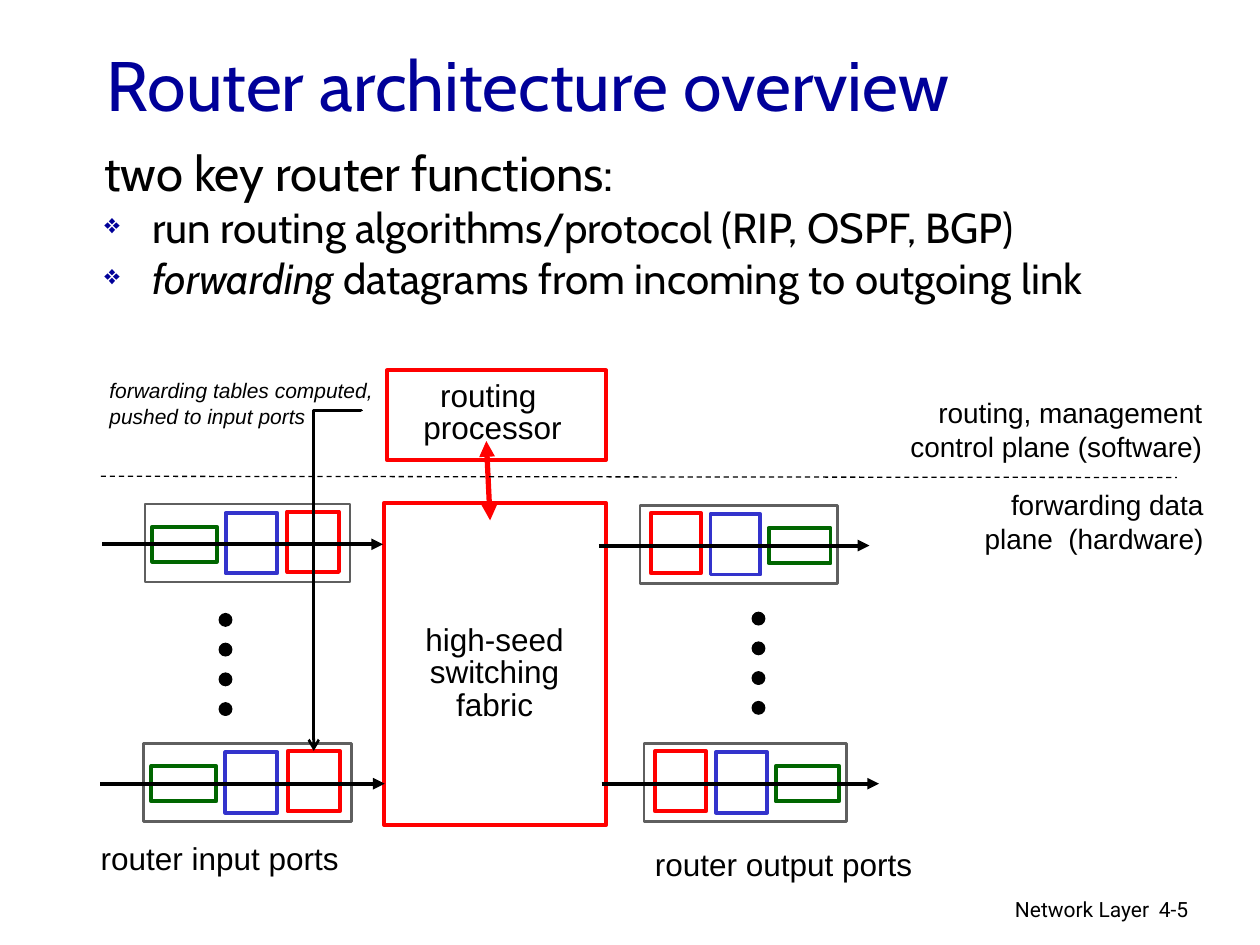
from lxml import etree
from pptx import Presentation
from pptx import util as u
from pptx.dml.color import RGBColor
from pptx.enum import dml, shapes, text
from pptx.oxml.ns import qn

PX = 9144  # 100 px to the inch
COLORS = {
    "white": "FFFFFF", "black": "000000", "navy": "000099", "red": "FF0000",
    "blue": "3333CC", "green": "006600", "gray": "5F5F5F",
}
LEFT, CENTER, RIGHT = text.PP_ALIGN.LEFT, text.PP_ALIGN.CENTER, text.PP_ALIGN.RIGHT


def px(*lengths):
    return [u.Emu(round(length * PX)) for length in lengths]


def rgb(name):
    return RGBColor.from_string(COLORS[name])


def add_span(para, words, size, font, color="black", italic=False):
    span = para.add_run()
    span.text = words
    span.font.size = u.Pt(size)
    span.font.name = font
    span.font.italic = italic
    span.font.color.rgb = rgb(color)


def add_frame(slide, box, wrap=True, anchor=text.MSO_ANCHOR.TOP):
    frame = slide.shapes.add_textbox(*px(*box)).text_frame
    frame.word_wrap = wrap
    frame.vertical_anchor = anchor
    return frame


def add_label(slide, box, lines, size, font="Arial", align=LEFT, wrap=False,
              spacing=None, italic=False):
    frame = add_frame(slide, box, wrap)
    if not wrap:
        frame.auto_size = text.MSO_AUTO_SIZE.SHAPE_TO_FIT_TEXT
    for index, line in enumerate(lines):
        para = frame.add_paragraph() if index else frame.paragraphs[0]
        para.alignment = align
        para.line_spacing = spacing
        add_span(para, line, size, font, italic=italic)


def add_block(slide, box, line, width, fill="white", kind=shapes.MSO_SHAPE.RECTANGLE):
    block = slide.shapes.add_shape(kind, *px(*box))
    block.shadow.inherit = False
    block.fill.solid()
    block.fill.fore_color.rgb = rgb(fill)
    block.line.color.rgb = rgb(line)
    block.line.width = u.Pt(width)


def add_line(slide, ends, color, width, head=None, tail=None,
             kind=shapes.MSO_CONNECTOR.STRAIGHT):
    line = slide.shapes.add_connector(kind, *px(*ends))
    line.line.color.rgb = rgb(color)
    line.line.width = u.Pt(width)
    outline = line.line._get_or_add_ln()
    for tag, arrow in (("a:headEnd", head), ("a:tailEnd", tail)):
        if arrow:
            etree.SubElement(outline, qn(tag), type=arrow)
    etree.SubElement(line._element.spPr, qn("a:effectLst"))
    return line


def add_bullet(para, indent):
    props = para._p.get_or_add_pPr()
    props.set("marL", str(indent))
    props.set("indent", str(-indent))
    color = etree.SubElement(props, qn("a:buClr"))
    etree.SubElement(color, qn("a:srgbClr"), val=COLORS["navy"])
    etree.SubElement(props, qn("a:buSzPct"), val="65000")
    etree.SubElement(props, qn("a:buChar"), char="❖")


def add_title(slide, box):
    frame = add_frame(slide, box, anchor=text.MSO_ANCHOR.MIDDLE)
    add_span(frame.paragraphs[0], "Router architecture overview", 40, "Cabin", "navy")


def add_functions(slide, box):
    frame = add_frame(slide, box)
    rows = [
        (28, False, [("two key router functions:", False)]),
        (24, True, [("run routing algorithms/protocol (RIP, OSPF, BGP)", False)]),
        (24, True, [("forwarding ", True),
                    ("datagrams from incoming to outgoing link", False)]),
    ]
    for index, (size, bulleted, spans) in enumerate(rows):
        para = frame.add_paragraph() if index else frame.paragraphs[0]
        para.line_spacing = 0.85
        para.space_before = u.Pt(size * 0.2)
        if bulleted:
            add_bullet(para, 38 * PX)
        for words, italic in spans:
            add_span(para, words, size, "Cabin", italic=italic)


def add_core(slide, box):
    """Switching fabric below, routing processor above, joined by an arrow."""
    left, top, width, height = box
    add_block(slide, (left, top + 105, width, height - 105), "red", 2.25)
    add_label(slide, (left + 20, top + 198, 135, 88),
              ["high-seed ", "switching", "fabric"], 18, align=CENTER, spacing=0.85)
    add_block(slide, (left + 2, top, width - 2, 71), "red", 2.25)
    add_label(slide, (left + 21, top + 4, 130, 61),
              ["routing ", "processor"], 18, align=CENTER, spacing=0.85)
    add_line(slide, (left + 81, top + 56, left + 84, top + 119), "red", 3,
             "triangle", "triangle")


def add_port(slide, box, mirrored=False):
    """Three stages in a frame, crossed by the flow; output ports are mirrored."""
    left, top, width, height = box
    scale = width / 163
    add_block(slide, box, "gray", 1.5)
    stages = [("green", 6, 18, 51, 28), ("blue", 64, 7, 41, 48), ("red", 113, 6, 41, 48)]
    for color, across, down, wide, high in stages:
        start = 163 - across - wide if mirrored else across
        add_block(slide, (left + start * scale, top + down, wide * scale, high),
                  color, 2.25)
    flow = top + 32
    add_line(slide, (left - 34 * scale, flow, left + 189 * scale, flow),
             "black", 2.25, tail="triangle")


def add_dots(slide, left, top):
    for index in range(4):
        add_block(slide, (left, top + index * 23.6, 10, 10), "black", 0.75, "black",
                  shapes.MSO_SHAPE.OVAL)


def add_planes(slide, box):
    """Dashed border between the control plane and the data plane."""
    left, top, width, height = box
    border = add_line(slide, (left, top + 69, left + 854, top + 70), "black", 0.75)
    border.line.dash_style = dml.MSO_LINE.DASH
    add_label(slide, (left + width - 212, top + 73, 212, 64),
              ["forwarding data plane  (hardware)"], 16, align=RIGHT, wrap=True)
    add_label(slide, (left + width - 269, top, 268, 64),
              ["routing, management", "control plane (software)"], 16,
              align=RIGHT, wrap=True)


def add_table_push(slide, box):
    """Note on forwarding tables, with a bent arrow down to the input port."""
    left, top, width, height = box
    # The elbow is laid flat, then turned a quarter about its centre
    arrow = add_line(slide, (left + 56, top + 147, left + 326, top + 185), "black", 1.5,
                     tail="arrow", kind=shapes.MSO_CONNECTOR.ELBOW)
    props = arrow._element.spPr
    props.find(qn("a:xfrm")).set("rot", "5400000")
    guides = props.find(qn("a:prstGeom")).get_or_add_avLst()
    etree.SubElement(guides, qn("a:gd"), name="adj1", fmla="val -100")
    add_label(slide, (left, top, width, height),
              ["forwarding tables computed,", "pushed to input ports"], 12, italic=True)


def add_footer(slide, box):
    left, top, width, height = box
    add_label(slide, (left, top, 317, height), ["Network Layer"], 12, "Roboto",
              RIGHT, wrap=True)
    add_label(slide, (left + width - 74, top, 74, height), ["4-5"], 12, "Roboto",
              wrap=True)


def main():
    deck = Presentation()
    deck.slide_width, deck.slide_height = px(1000, 750)
    slide = deck.slides.add_slide(deck.slide_layouts[6])

    add_footer(slide, (605, 707, 379, 30))
    add_title(slide, (75, 33, 850, 67))
    add_functions(slide, (73, 115, 889, 100))
    add_core(slide, (305, 294, 176, 361))

    # Input ports
    add_port(slide, (115, 400, 163, 62))
    add_port(slide, (114, 590, 165, 62))
    add_dots(slide, 174, 487)
    add_label(slide, (70, 661, 209, 40), ["router input ports"], 18)

    # Output ports
    add_port(slide, (508, 401, 157, 62), mirrored=True)
    add_port(slide, (511, 590, 161, 62), mirrored=True)
    add_dots(slide, 597, 486)
    add_label(slide, (510, 666, 224, 40), ["router output ports"], 18)

    add_planes(slide, (80, 309, 885, 137))
    add_table_push(slide, (77, 295, 236, 50))
    deck.save("out.pptx")


if __name__ == "__main__":
    main()
